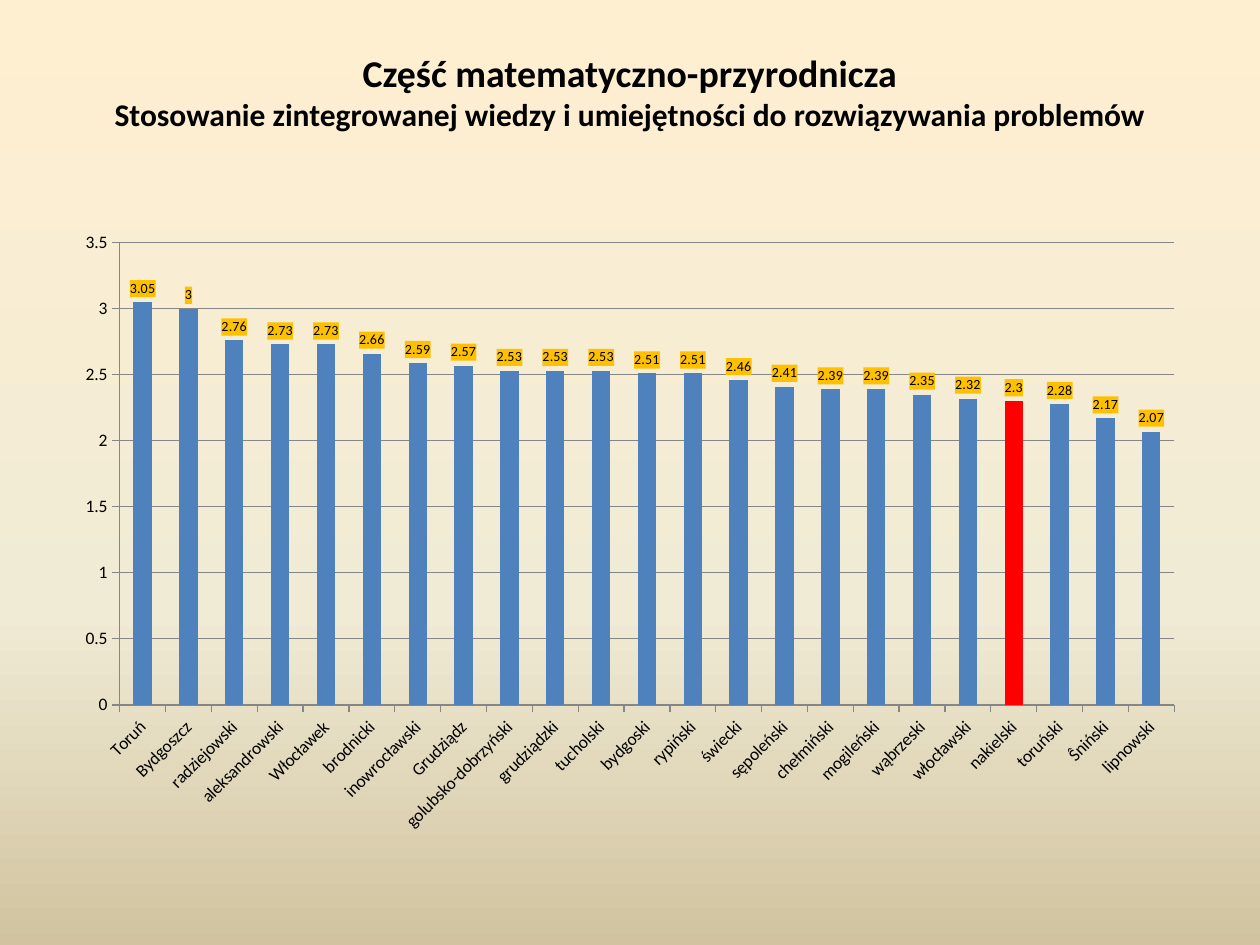
from copy import deepcopy

from lxml import etree
from pptx import Presentation
from pptx.chart import data as cd
from pptx.dml import color as dml
from pptx.enum import chart as ch, text as tx
from pptx.oxml import ns, parse_xml
from pptx.util import Pt

FONT = "Calibri"
HUES = {
    "text": "000000", "bar": "4F81BD", "mark": "FF0000", "label": "FFC000",
    "line": "868686", "top": "FFEFD1", "mid": "F0EBD5", "base": "D1C39F",
}
SCORES = {
    "Toruń": 3.05, "Bydgoszcz": 3, "radziejowski": 2.76, "aleksandrowski": 2.73,
    "Włocławek": 2.73, "brodnicki": 2.66, "inowrocławski": 2.59, "Grudziądz": 2.57,
    "golubsko-dobrzyński": 2.53, "grudziądzki": 2.53, "tucholski": 2.53,
    "bydgoski": 2.51, "rypiński": 2.51, "świecki": 2.46, "sępoleński": 2.41,
    "chełmiński": 2.39, "mogileński": 2.39, "wąbrzeski": 2.35, "włocławski": 2.32,
    "nakielski": 2.3, "toruński": 2.28, "Ŝniński": 2.17, "lipnowski": 2.07,
}
MARKED = "nakielski"


def rgb(name):
    return dml.RGBColor.from_string(HUES[name])


def paint(fill, name):
    fill.solid()
    fill.fore_color.rgb = rgb(name)


def style(font, size, bold=False):
    font.name = FONT
    font.size = Pt(size)
    font.bold = bold
    font.color.rgb = rgb("text")


def set_back(slide):
    fill = slide.background.fill
    fill.gradient()
    fill.gradient_angle = 270
    stops = slide.element.find(".//" + ns.qn("a:gsLst"))
    stops.insert(1, deepcopy(stops[0]))
    for stop, (name, place) in zip(
        fill.gradient_stops, [("top", 0), ("mid", 0.65), ("base", 1)]
    ):
        stop.color.rgb = rgb(name)
        stop.position = place


def set_title(slide):
    title = slide.shapes.title
    title.left, title.top, title.width, title.height = Pt(36), Pt(21.6), Pt(648), Pt(90)
    frame = title.text_frame
    frame.auto_size = tx.MSO_AUTO_SIZE.NONE
    frame.vertical_anchor = tx.MSO_ANCHOR.TOP
    frame.margin_top = Pt(7)
    para = frame.paragraphs[0]
    para.alignment = tx.PP_ALIGN.CENTER
    head = para.add_run()
    head.text = "Część matematyczno-przyrodnicza"
    style(head.font, 21.6, True)
    para.add_line_break()
    sub = para.add_run()
    sub.text = "Stosowanie zintegrowanej wiedzy i umiejętności do rozwiązywania problemów"
    style(sub.font, 18, True)


def set_axis(axis):
    axis.major_tick_mark = ch.XL_TICK_MARK.OUTSIDE
    axis.minor_tick_mark = ch.XL_TICK_MARK.NONE
    axis.format.line.color.rgb = rgb("line")
    axis.format.line.width = Pt(0.75)
    style(axis.tick_labels.font, 10)


def set_labels(series):
    labels = series.data_labels
    labels.show_value = True
    labels.position = ch.XL_LABEL_POSITION.OUTSIDE_END
    style(labels.font, 8)
    shade = parse_xml(
        f'<c:spPr {ns.nsdecls("c", "a")}><a:solidFill>'
        f'<a:srgbClr val="{HUES["label"]}"/></a:solidFill></c:spPr>'
    )
    labels._element.find(ns.qn("c:txPr")).addprevious(shade)


def add_bars(slide):
    data = cd.CategoryChartData()
    data.categories = list(SCORES)
    data.add_series("Series 1", list(SCORES.values()))
    chart = slide.shapes.add_chart(
        ch.XL_CHART_TYPE.COLUMN_CLUSTERED, Pt(36), Pt(126), Pt(648), Pt(356.4), data
    ).chart
    chart.has_title = False
    chart.has_legend = False
    style(chart.font, 10)
    cats, vals = chart.category_axis, chart.value_axis
    set_axis(cats)
    set_axis(vals)
    body = cats._element.find(ns.qn("c:txPr")).find(ns.qn("a:bodyPr"))
    body.set("rot", "-2700000")
    body.set("vert", "horz")
    vals.minimum_scale, vals.maximum_scale, vals.major_unit = 0, 3.5, 0.5
    vals.has_major_gridlines = True
    grid = vals.major_gridlines.format.line
    grid.color.rgb = rgb("line")
    grid.width = Pt(0.75)
    plot = chart.plots[0]
    plot.gap_width = 150
    plot.vary_by_categories = False
    series = plot.series[0]
    paint(series.format.fill, "bar")
    paint(series.points[list(SCORES).index(MARKED)].format.fill, "mark")
    set_labels(series)


def main():
    deck = Presentation()
    deck.slide_width, deck.slide_height = Pt(720), Pt(540)
    slide = deck.slides.add_slide(deck.slide_layouts[5])
    set_back(slide)
    set_title(slide)
    add_bars(slide)
    deck.save("out.pptx")


if __name__ == "__main__":
    main()
